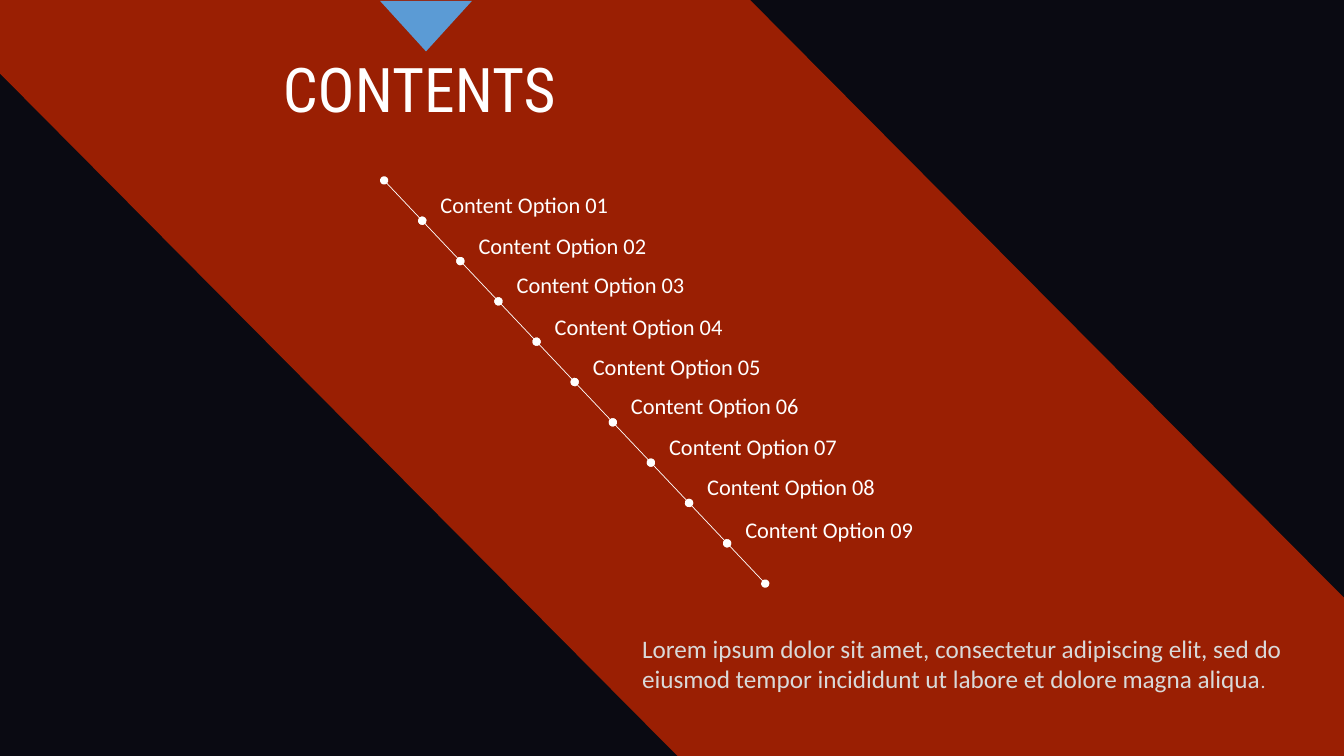
"""Build a contents slide with nine options along a slanted line."""
from lxml import etree
from pptx import Presentation
from pptx.dml.color import RGBColor
from pptx.enum.shapes import MSO_CONNECTOR, MSO_SHAPE
from pptx.enum.text import MSO_ANCHOR, MSO_AUTO_SIZE, PP_ALIGN
from pptx.oxml.ns import qn
from pptx.util import Inches, Pt

STRAIGHT = MSO_CONNECTOR.STRAIGHT
TRIANGLE = MSO_SHAPE.ISOSCELES_TRIANGLE
TOP = MSO_ANCHOR.TOP
GROW = MSO_AUTO_SIZE.SHAPE_TO_FIT_TEXT
CENTER = PP_ALIGN.CENTER

NIGHT = RGBColor(0x0A, 0x0A, 0x12)
RED = RGBColor(0xBF, 0x25, 0x00)
BLUE = RGBColor(0x5B, 0x9B, 0xD5)
WHITE = RGBColor(0xFF, 0xFF, 0xFF)
GRAY = RGBColor(0xD9, 0xD9, 0xD9)


def style(run, size, color, face="Calibri"):
    run.font.size = Pt(size)
    run.font.name = face
    run.font.color.rgb = color


def add_text(left, top, width, height, text, size, color):
    box = slide.shapes.add_textbox(Inches(left), Inches(top),
                                   Inches(width), Inches(height))
    frame = box.text_frame
    frame.word_wrap = True
    frame.auto_size = GROW
    frame.text = text
    style(frame.paragraphs[0].runs[0], size, color)
    return frame.paragraphs[0]


deck = Presentation()
deck.slide_width = Inches(13.33)
deck.slide_height = Inches(7.5)
slide = deck.slides.add_slide(deck.slide_layouts[5])
slide.background.fill.solid()
slide.background.fill.fore_color.rgb = NIGHT

corners = [(7.44, 0), (13.33, 5.93), (13.33, 7.5), (6.72, 7.5), (0, 0.73), (0, 0)]
points = [(Inches(x), Inches(y)) for x, y in corners]
pen = slide.shapes.build_freeform(*points[0])
pen.add_line_segments(points[1:], close=True)
band = pen.convert_to_shape()
band.shadow.inherit = False
band.fill.solid()
band.fill.fore_color.rgb = RED
band.line.fill.background()
tint = band.element.spPr.find(qn("a:solidFill"))[0]
etree.SubElement(tint, qn("a:alpha"), val="80000")
slide.shapes.element.insert(2, band.element)

title = slide.shapes.title
title.left, title.top = Inches(2.16), Inches(0.46)
title.width, title.height = Inches(4), Inches(0.84)
frame = title.text_frame
frame.text = "CONTENTS"
frame.word_wrap = True
frame.auto_size = GROW
frame.vertical_anchor = TOP
frame.paragraphs[0].alignment = CENTER
style(frame.paragraphs[0].runs[0], 44, WHITE, "Roboto Condensed")

left, top = 3.81, 1.79
step, drop = 0.378, 0.4
for i in range(10):
    x, y = left + i * step, top + i * drop
    link = slide.shapes.add_connector(STRAIGHT, Inches(x), Inches(y),
                                      Inches(x + step), Inches(y + drop))
    link.line.color.rgb = WHITE
    link.line.width = Pt(0.5)
    stroke = link.line._get_or_add_ln()
    for end in ("a:headEnd", "a:tailEnd"):
        etree.SubElement(stroke, qn(end), type="oval")
    etree.SubElement(link.element.spPr, qn("a:effectLst"))

label_tops = [1.85, 2.25, 2.64, 3.06, 3.45, 3.84, 4.25, 4.64, 5.07]
for i, label_top in enumerate(label_tops):
    add_text(4.27 + i * step, label_top, 2, 0.37,
             f"Content Option {i + 1:02}", 16, WHITE)

arrow = slide.shapes.add_shape(TRIANGLE, Inches(3.77), Inches(0.01),
                               Inches(0.91), Inches(0.5))
arrow.rotation = 180
arrow.shadow.inherit = False
arrow.fill.solid()
arrow.fill.fore_color.rgb = BLUE
arrow.line.fill.background()

note = add_text(6.27, 6.23, 7.06, 0.71,
                "Lorem ipsum dolor sit amet, consectetur adipiscing elit, sed do "
                "eiusmod tempor incididunt ut labore et dolore magna aliqua",
                18, GRAY)
stop = note.add_run()
stop.text = "."
style(stop, 14, GRAY)

deck.save("out.pptx")
